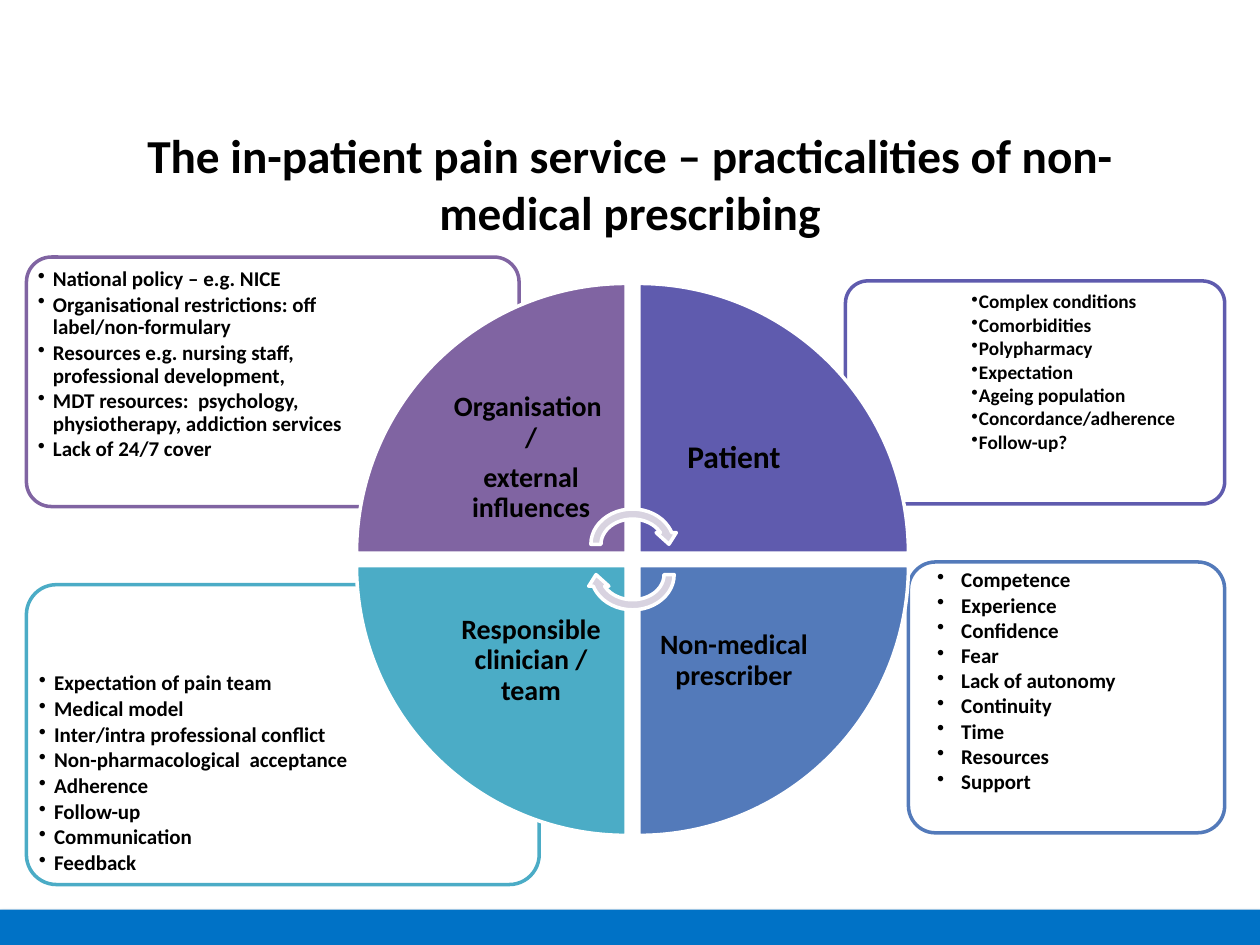
"""Build the slide on non-medical prescribing in the in-patient pain service."""
from lxml import etree
from pptx import Presentation
from pptx.dml.color import RGBColor
from pptx.enum import shapes, text
from pptx.oxml import ns
from pptx.util import Inches, Pt

BLACK = RGBColor(0x00, 0x00, 0x00)
WHITE = RGBColor(0xFF, 0xFF, 0xFF)
BLUE_BAR = RGBColor(0x00, 0x72, 0xC6)
PURPLE = RGBColor(0x80, 0x64, 0xA2)
INDIGO = RGBColor(0x5F, 0x5B, 0xAE)
BLUE = RGBColor(0x53, 0x7A, 0xBA)
TEAL = RGBColor(0x4B, 0xAC, 0xC6)
PALE = RGBColor(0xD8, 0xD3, 0xE0)
FONT = "Calibri"
SHAPE = shapes.MSO_SHAPE
WEDGE, LABEL = 2.14, 1.51
LEFT, RIGHT, TOP, BOTTOM = 2.83, 5.07, 2.25, 4.49

ORGANISATION = [
    "National policy – e.g. NICE",
    "Organisational restrictions: off label/non-formulary",
    "Resources e.g. nursing staff, professional development,",
    "MDT resources:  psychology, physiotherapy, addiction services",
    "Lack of 24/7 cover",
]
PATIENT = ["Complex conditions", "Comorbidities", "Polypharmacy", "Expectation",
           "Ageing population", "Concordance/adherence", "Follow-up?"]
CLINICIAN = ["Expectation of pain team", "Medical model",
             "Inter/intra professional conflict",
             "Non-pharmacological  acceptance", "Adherence", "Follow-up",
             "Communication", "Feedback"]
PRESCRIBER = ["Competence", "Experience", "Confidence", "Fear",
              "Lack of autonomy", "Continuity", "Time", "Resources", "Support"]


def add_shape(s, kind, box, fill, line=None, rotation=0):
    """Add a filled preset shape without text."""
    sp = s.shapes.add_shape(kind, *map(Inches, box))
    sp.shadow.inherit = False
    sp.fill.solid()
    sp.fill.fore_color.rgb = fill
    if line is None:
        sp.line.fill.background()
    else:
        sp.line.color.rgb = line
        sp.line.width = Pt(2)
    sp.rotation = rotation
    return sp


def add_footer(s):
    """Add the bottom bar with its soft shadow."""
    sp = add_shape(s, SHAPE.RECTANGLE, (0, 7.22, 10, 0.28), BLUE_BAR)
    effects = sp._element.spPr.find(ns.qn("a:effectLst"))
    shadow = etree.SubElement(effects, ns.qn("a:outerShdw"), blurRad="39370",
                              dist="22860", dir="5400000", rotWithShape="0")
    color = etree.SubElement(shadow, ns.qn("a:srgbClr"), val="000000")
    etree.SubElement(color, ns.qn("a:alpha"), val="35000")


def add_bullet(p, indent):
    """Give a paragraph a round bullet with a hanging indent."""
    pPr = p._p.get_or_add_pPr()
    pPr.set("marL", str(Inches(indent)))
    pPr.set("indent", str(-Inches(indent)))
    etree.SubElement(pPr, ns.qn("a:buChar"), char="•")


def add_text(s, box, lines, size, inset=0.05, spacing=0.9, after=0.0,
             indent=None, centered=False):
    """Add bold black paragraphs, bulleted when an indent is given."""
    tf = s.shapes.add_textbox(*map(Inches, box)).text_frame
    tf.word_wrap = True
    tf.margin_left = tf.margin_right = Inches(inset)
    tf.margin_top = tf.margin_bottom = Inches(min(inset, 0.05) if indent else inset)
    tf.vertical_anchor = text.MSO_ANCHOR.MIDDLE if centered else text.MSO_ANCHOR.TOP
    tf.text = "\n".join(lines)
    for p in tf.paragraphs:
        p.line_spacing = spacing
        p.space_after = Pt(round(size * after, 1))
        p.alignment = text.PP_ALIGN.CENTER if centered else text.PP_ALIGN.LEFT
        if indent:
            add_bullet(p, indent)
        for r in p.runs:
            r.font.name = FONT
            r.font.size = Pt(size)
            r.font.bold = True
            r.font.color.rgb = BLACK


def add_panel(s, box, color):
    """Add a rounded outline panel."""
    sp = add_shape(s, SHAPE.ROUNDED_RECTANGLE, box, WHITE, color)
    sp.adjustments[0] = 0.1


def add_quadrant(s, left, top, rotation, color, lines, size=16, inset=0.12):
    """Add a quarter of the circle with its label near the centre."""
    add_shape(s, SHAPE.PIE_WEDGE, (left, top, WEDGE, WEDGE), color, WHITE, rotation)
    x = left + WEDGE - LABEL if left == LEFT else left
    y = top + WEDGE - LABEL if top == TOP else top
    add_text(s, (x, y, LABEL, LABEL), lines, size, inset, after=0.35, centered=True)


def main():
    """Build and save the slide."""
    prs = Presentation()
    prs.slide_width, prs.slide_height = Inches(10), Inches(7.5)
    s = prs.slides.add_slide(prs.slide_layouts[6])
    add_footer(s)

    add_panel(s, (7.21, 4.46, 2.51, 2.15), BLUE)
    add_panel(s, (0.21, 4.64, 4.07, 2.38), TEAL)
    add_panel(s, (6.71, 2.23, 3.01, 1.77), INDIGO)
    add_panel(s, (0.21, 2.04, 3.91, 1.98), PURPLE)
    add_text(s, (0.26, 5.29, 2.74, 1.68), CLINICIAN, 12, after=0.14, indent=0.12)
    add_text(s, (7.66, 2.27, 2.03, 1.25), PATIENT, 11, after=0.14, indent=0.06)
    add_text(s, (0.25, 2.08, 2.65, 1.4), ORGANISATION, 12, after=0.14, indent=0.12)

    add_quadrant(s, LEFT, TOP, 0, PURPLE, ["Organisation  /", "external influences"])
    add_quadrant(s, RIGHT, TOP, 90, INDIGO, ["Patient"], 18, 0.14)
    add_quadrant(s, RIGHT, BOTTOM, 180, BLUE, ["Non-medical prescriber"])
    add_quadrant(s, LEFT, BOTTOM, 270, TEAL, ["Responsible clinician / team"])
    for top, rotation in ((4, 0), (4.24, 180)):
        add_shape(s, SHAPE.CIRCULAR_ARROW, (4.65, top, 0.74, 0.64), PALE, WHITE, rotation)

    title = "The in-patient pain service – practicalities of non-medical prescribing"
    add_text(s, (0.5, 1.17, 9, 0.57), [title], 27, 0.1, 1.0, centered=True)
    add_text(s, (7.34, 4.45, 1.67, 1.92), PRESCRIBER, 12, 0.1, 1.0, indent=0.19)
    prs.save("out.pptx")


if __name__ == "__main__":
    main()
